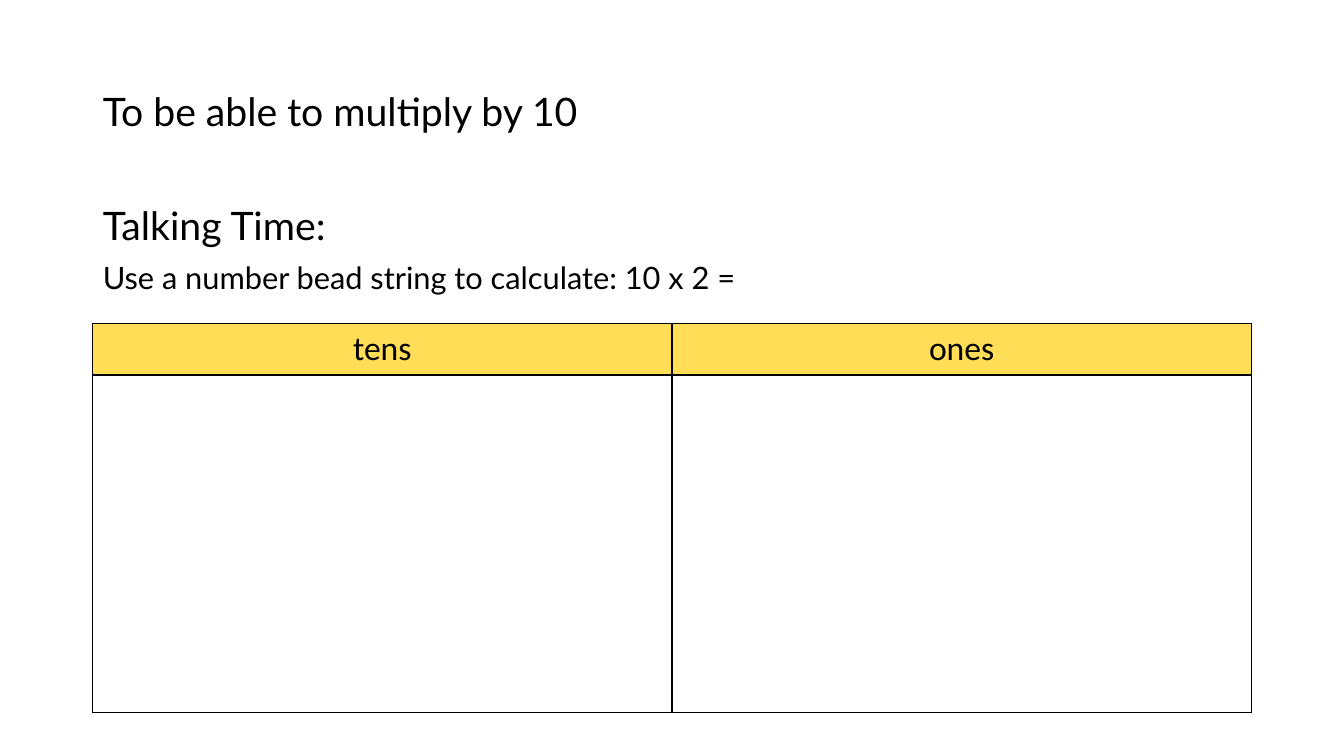
from dataclasses import dataclass

from lxml import etree
from pptx import Presentation
from pptx import util as u
from pptx.dml.color import RGBColor
from pptx.enum import text
from pptx.oxml.ns import qn


@dataclass(frozen=True)
class Theme:
    ink: str = "000000"
    paper: str = "FFFFFF"
    header: str = "FFDD57"
    font: str = "Lato"
    table_font: str = "Calibri"
    heading: int = 28
    body: int = 22
    label: int = 24
    border: int = 1


@dataclass(frozen=True)
class Area:
    col: float
    row: float
    cols: float
    rows: float

    def box(self) -> tuple[int, int, int, int]:
        return (int(self.col * COL), int(self.row * ROW),
                int(self.cols * COL), int(self.rows * ROW))


@dataclass(frozen=True)
class Line:
    words: str
    size: int


THEME = Theme()
WIDTH, HEIGHT = u.Inches(13.33), u.Inches(7.5)
COL, ROW = WIDTH / 29, HEIGHT / 75

TITLE_AREA = Area(2, 4, 21, 14.5)
BODY_AREA = Area(2, 20, 25, 47.6)
TABLE_AREA = Area(2, 32.1, 25, 38.6)
HEADER_ROWS = 5.1

TITLE = [Line("To be able to multiply by 10", THEME.heading)]
BODY = [
    Line("Talking Time:", THEME.heading),
    Line("Use a number bead string to calculate: 10 x 2 =", THEME.body),
]
PLACES = ["tens", "ones"]


def style(p, size: int, font: str) -> None:
    for r in p.runs:
        r.font.size = u.Pt(size)
        r.font.name = font
        r.font.color.rgb = RGBColor.from_string(THEME.ink)


def fill_placeholder(sp, area: Area, lines: list[Line], anchor) -> None:
    sp.left, sp.top, sp.width, sp.height = area.box()
    tf = sp.text_frame
    tf.text = "\n".join(line.words for line in lines)
    tf.auto_size = text.MSO_AUTO_SIZE.NONE
    tf.vertical_anchor = anchor
    for i, (p, line) in enumerate(zip(tf.paragraphs, lines)):
        pPr = p._p.get_or_add_pPr()
        pPr.set("marL", "0")
        pPr.set("indent", "0")
        etree.SubElement(pPr, qn("a:buNone"))
        p.alignment = text.PP_ALIGN.LEFT
        p.line_spacing = 0.9
        p.space_before = u.Pt(10 if i else 0)
        style(p, line.size, THEME.font)


def format_cell(cell, color: str) -> None:
    tcPr = cell._tc.get_or_add_tcPr()
    for side in ("lnL", "lnR", "lnT", "lnB"):
        ln = etree.SubElement(tcPr, qn(f"a:{side}"), w=str(u.Pt(THEME.border)))
        solid = etree.SubElement(ln, qn("a:solidFill"))
        etree.SubElement(solid, qn("a:srgbClr"), val=THEME.ink)
    cell.fill.solid()
    cell.fill.fore_color.rgb = RGBColor.from_string(color)


def add_place_value_table(s, area: Area, places: list[str]) -> None:
    table = s.shapes.add_table(2, len(places), *area.box()).table
    table.first_row = table.horz_banding = False
    table.rows[0].height = int(HEADER_ROWS * ROW)
    table.rows[1].height = int((area.rows - HEADER_ROWS) * ROW)
    for i, place in enumerate(places):
        head = table.cell(0, i)
        format_cell(head, THEME.header)
        format_cell(table.cell(1, i), THEME.paper)
        p = head.text_frame.paragraphs[0]
        p.text = place
        p.alignment = text.PP_ALIGN.CENTER
        style(p, THEME.label, THEME.table_font)


def main() -> None:
    prs = Presentation()
    prs.slide_width, prs.slide_height = WIDTH, HEIGHT
    s = prs.slides.add_slide(prs.slide_layouts[1])
    fill_placeholder(s.shapes.title, TITLE_AREA, TITLE, text.MSO_ANCHOR.MIDDLE)
    fill_placeholder(s.placeholders[1], BODY_AREA, BODY, text.MSO_ANCHOR.TOP)
    add_place_value_table(s, TABLE_AREA, PLACES)
    prs.save("out.pptx")


if __name__ == "__main__":
    main()
